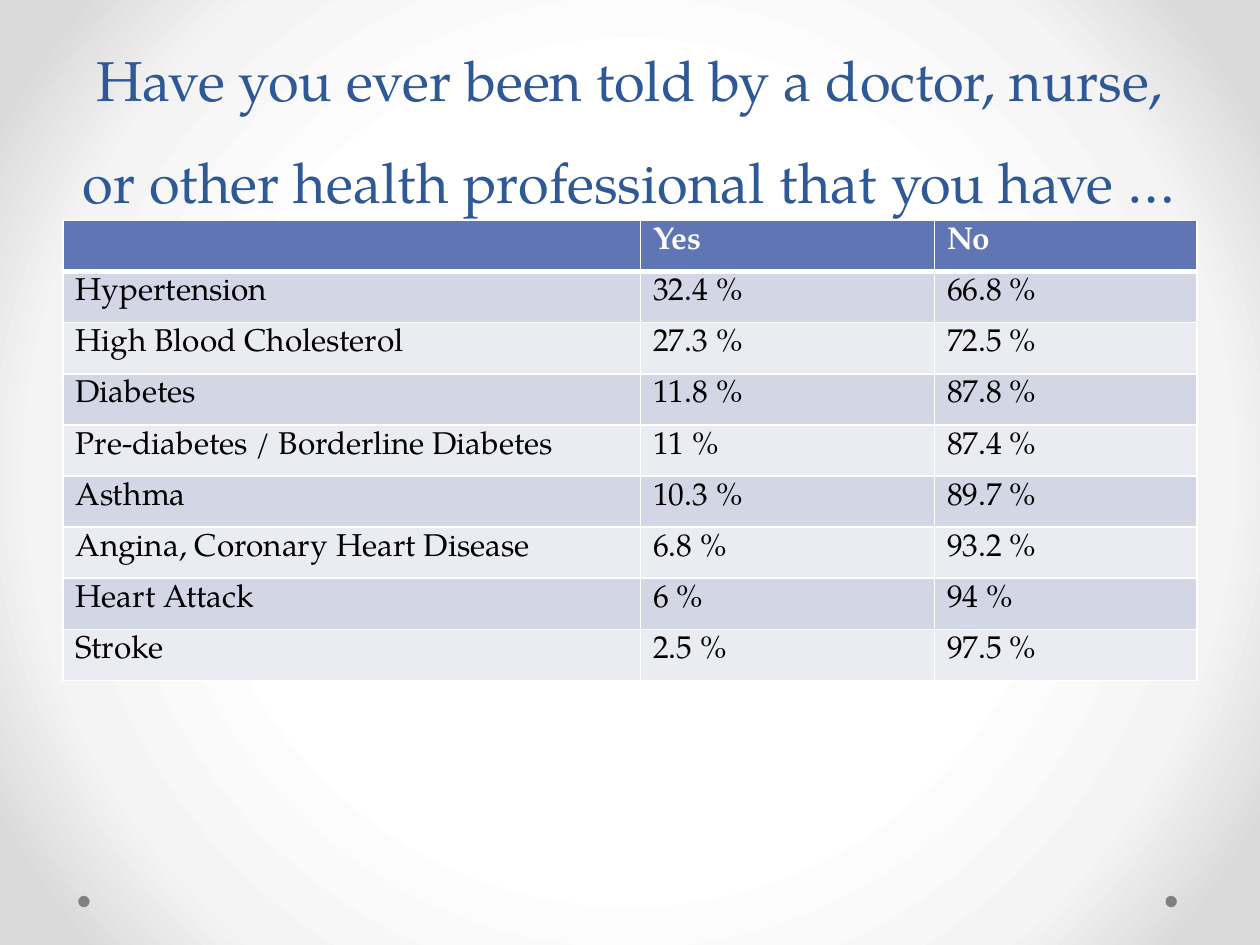
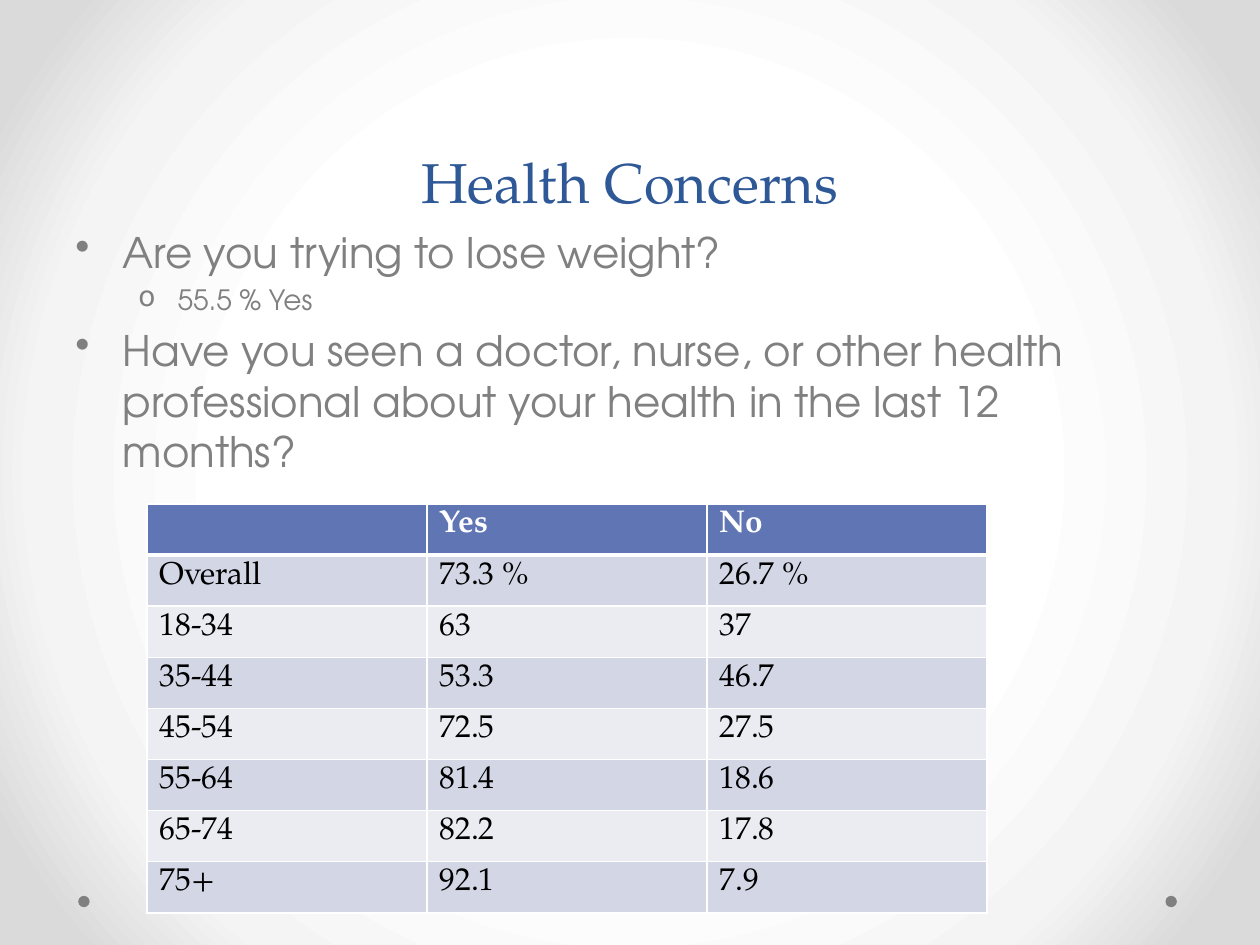
from pptx import Presentation
from pptx.dml.color import RGBColor
from pptx.enum.shapes import MSO_SHAPE
from pptx.enum.text import MSO_ANCHOR, PP_ALIGN
from pptx.oxml import parse_xml
from pptx.oxml.ns import nsdecls, qn
from pptx.util import Pt

OVAL = MSO_SHAPE.OVAL
BOTTOM = MSO_ANCHOR.BOTTOM
CENTER = PP_ALIGN.CENTER

SERIF = "TeX Gyre Pagella"
SANS = "TeX Gyre Adventor"
TITLE_BLUE = RGBColor(0x2F, 0x58, 0x97)
HEADER_BLUE = RGBColor(0x60, 0x76, 0xB4)
BAND_DARK = RGBColor(0xD2, 0xD6, 0xE5)
BAND_LIGHT = RGBColor(0xEA, 0xEC, 0xF2)
GRAY = RGBColor(0x80, 0x80, 0x80)
WHITE = RGBColor(0xFF, 0xFF, 0xFF)
BLACK = RGBColor(0x00, 0x00, 0x00)
SILVER = RGBColor(0xF4, 0xF4, 0xF4)
EDGE_GRAY = RGBColor(0xDA, 0xDA, 0xDA)

BACKDROP_STOPS = [(50, WHITE), (76, SILVER), (92, EDGE_GRAY)]
MARGIN, CONTENT_WIDTH, TITLE_HEIGHT = 36, 648, 126
ROW_HEIGHT = 29.2
DOT_SIZE, DOT_TOP, DOT_LEFTS = 6.5, 511.9, (666, 44.7)
BULLET_LEVELS = [("•", 24, 27, -27), ("o", 16, 58.5, -22.5)]

CONDITIONS = [
    ("", "Yes", "No"),
    ("Hypertension", "32.4 %", "66.8 %"),
    ("High Blood Cholesterol", "27.3 %", "72.5 %"),
    ("Diabetes", "11.8 %", "87.8 %"),
    ("Pre-diabetes / Borderline Diabetes", "11 %", "87.4 %"),
    ("Asthma", "10.3 %", "89.7 %"),
    ("Angina, Coronary Heart Disease", "6.8 %", "93.2 %"),
    ("Heart Attack", "6 %", "94 %"),
    ("Stroke", "2.5 %", "97.5 %"),
]
VISITS_BY_AGE = [
    ("", "Yes", "No"),
    ("Overall", "73.3 %", "26.7 %"),
    ("18-34", "63", "37"),
    ("35-44", "53.3", "46.7"),
    ("45-54", "72.5", "27.5"),
    ("55-64", "81.4", "18.6"),
    ("65-74", "82.2", "17.8"),
    ("75+", "92.1", "7.9"),
]
QUESTIONS = [
    (0, "Are you trying to lose weight?"),
    (1, "55.5 % Yes"),
    (0, "Have you seen a doctor, nurse, or other health professional "
        "about your health in the last 12 months?"),
]


def style(paragraph, face, size, color, bold=False):
    font = paragraph.font
    font.name, font.size, font.bold = face, Pt(size), bold
    font.color.rgb = color


def add_backdrop(slide):
    stops = "".join(
        f'<a:gs pos="{percent * 1000}"><a:srgbClr val="{color}"/></a:gs>'
        for percent, color in BACKDROP_STOPS)
    backdrop = parse_xml(
        f'<p:bg {nsdecls("p", "a")}><p:bgPr><a:gradFill rotWithShape="1">'
        f'<a:gsLst>{stops}</a:gsLst><a:path path="circle">'
        '<a:fillToRect l="50000" t="50000" r="50000" b="50000"/></a:path>'
        '</a:gradFill><a:effectLst/></p:bgPr></p:bg>')
    slide.element.find(qn("p:cSld")).insert(0, backdrop)


def add_dot(slide, left):
    dot = slide.shapes.add_shape(
        OVAL, Pt(left), Pt(DOT_TOP), Pt(DOT_SIZE), Pt(DOT_SIZE))
    dot.shadow.inherit = False
    dot.fill.solid()
    dot.fill.fore_color.rgb = GRAY
    dot.line.fill.background()


def add_text_frame(slide, top, height):
    box = slide.shapes.add_textbox(
        Pt(MARGIN), Pt(top), Pt(CONTENT_WIDTH), Pt(height))
    box.text_frame.word_wrap = True
    return box.text_frame


def add_titled_slide(deck, title):
    slide = deck.slides.add_slide(deck.slide_layouts[6])
    add_backdrop(slide)
    for left in DOT_LEFTS:
        add_dot(slide, left)
    frame = add_text_frame(slide, 0, TITLE_HEIGHT)
    frame.vertical_anchor = BOTTOM
    heading = frame.paragraphs[0]
    heading.text = title
    heading.alignment = CENTER
    heading.line_spacing = Pt(58)
    style(heading, SERIF, 32, TITLE_BLUE)
    return slide


def add_bullets(slide, items):
    frame = add_text_frame(slide, TITLE_HEIGHT, 356.4)
    for index, (level, text) in enumerate(items):
        mark, size, margin, indent = BULLET_LEVELS[level]
        item = frame.add_paragraph() if index else frame.paragraphs[0]
        item.text = text
        item.level = level
        item.space_before = Pt(size * 0.2)
        style(item, SANS, size, GRAY)
        properties = item._p.get_or_add_pPr()
        properties.set("marL", str(Pt(margin)))
        properties.set("indent", str(Pt(indent)))
        bullet = parse_xml(f'<a:buChar {nsdecls("a")} char="{mark}"/>')
        properties.find(qn("a:defRPr")).addprevious(bullet)


def add_borders(cell, row):
    widths = {"L": 1, "R": 1, "T": 3 if row == 1 else 1,
              "B": 3 if row == 0 else 1}
    properties = cell._tc.get_or_add_tcPr()
    for side, width in widths.items():
        properties.append(parse_xml(
            f'<a:ln{side} {nsdecls("a")} w="{Pt(width)}"><a:solidFill>'
            f'<a:srgbClr val="{WHITE}"/></a:solidFill></a:ln{side}>'))


def add_answer_table(slide, left, top, widths, answers):
    table = slide.shapes.add_table(
        len(answers), len(widths), Pt(left), Pt(top),
        Pt(sum(widths)), Pt(ROW_HEIGHT * len(answers))).table
    for column, width in zip(table.columns, widths):
        column.width = Pt(width)
    for row, texts in enumerate(answers):
        table.rows[row].height = Pt(ROW_HEIGHT)
        header = row == 0
        band = HEADER_BLUE if header else BAND_DARK if row % 2 else BAND_LIGHT
        for column, text in enumerate(texts):
            cell = table.cell(row, column)
            add_borders(cell, row)
            cell.fill.solid()
            cell.fill.fore_color.rgb = band
            cell.text = text
            style(cell.text_frame.paragraphs[0], SERIF, 18,
                  WHITE if header else BLACK, header)


def main():
    deck = Presentation()
    deck.slide_width, deck.slide_height = Pt(720), Pt(540)

    diagnoses = add_titled_slide(
        deck, "Have you ever been told by a doctor, nurse, "
              "or other health professional that you have …")
    add_answer_table(diagnoses, MARGIN, TITLE_HEIGHT, (330, 168, 150), CONDITIONS)

    concerns = add_titled_slide(deck, "Health Concerns")
    add_bullets(concerns, QUESTIONS)
    add_answer_table(concerns, 84, 288, (160, 160, 160), VISITS_BY_AGE)

    deck.save("out.pptx")


if __name__ == "__main__":
    main()
